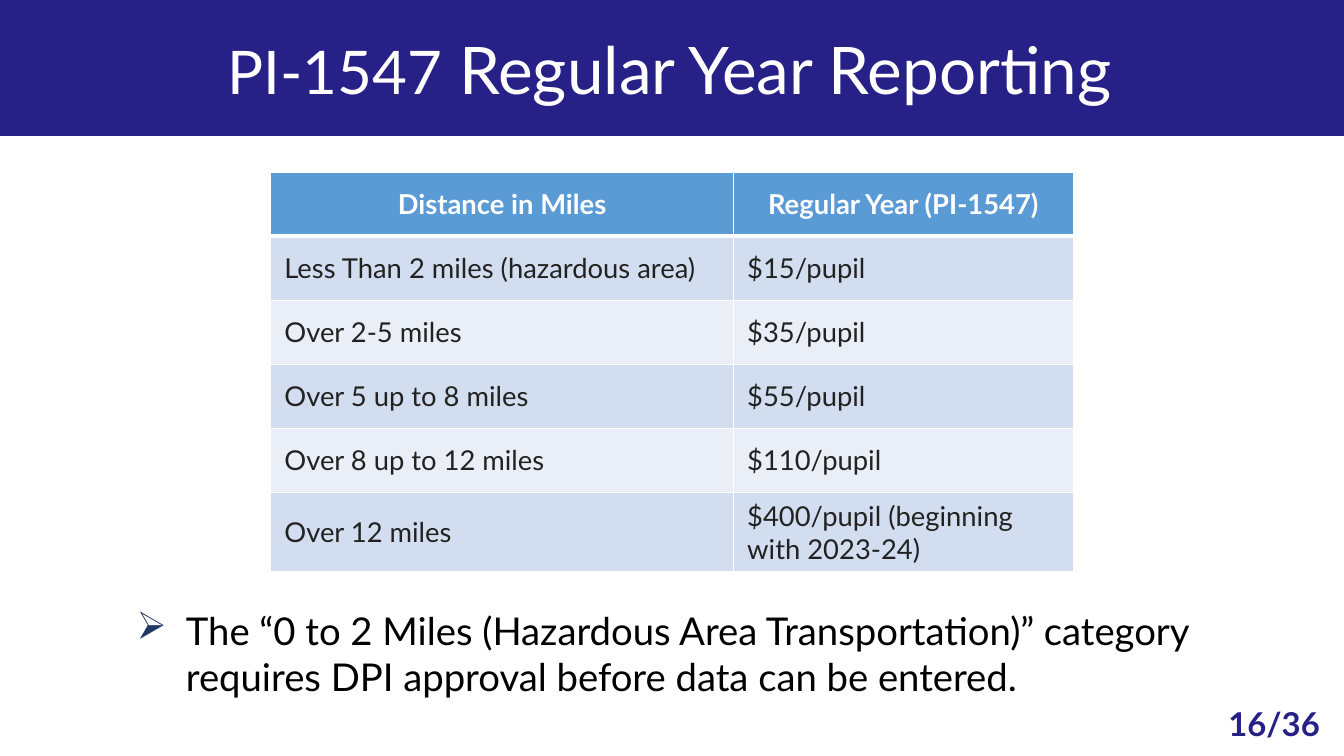
"""Build the PI-1547 regular year reporting slide."""
from lxml import etree
from pptx import Presentation
from pptx.dml.color import RGBColor
from pptx.enum.shapes import MSO_SHAPE
from pptx.enum.text import MSO_ANCHOR, PP_ALIGN
from pptx.oxml.ns import qn
from pptx.util import Pt

TITLE = [("PI-1547", 44), (" Regular Year Reporting", 48)]
RATES = [
    ("Distance in Miles", "Regular Year (PI-1547)"),
    ("Less Than 2 miles (hazardous area)", "$15/pupil"),
    ("Over 2-5 miles", "$35/pupil"),
    ("Over 5 up to 8 miles", "$55/pupil"),
    ("Over 8 up to 12 miles", "$110/pupil"),
    ("Over 12 miles", "$400/pupil (beginning with 2023-24)"),
]
NOTE = ("The “0 to 2 Miles (Hazardous Area Transportation)” category "
        "requires DPI approval before data can be entered.")
PAGE_NUMBER = "16/36"

FONT = "Lato"
NAVY = RGBColor(0x26, 0x20, 0x87)
WHITE = RGBColor(0xFF, 0xFF, 0xFF)
BLACK = RGBColor(0, 0, 0)
DARK_GREY = RGBColor(0x22, 0x22, 0x22)
HEADER_BLUE = RGBColor(0x5B, 0x9B, 0xD5)
BAND_BLUE = RGBColor(0xD2, 0xDE, 0xEF)
BAND_PALE = RGBColor(0xEA, 0xEF, 0xF7)
BULLET_NAVY = RGBColor(0x20, 0x38, 0x64)
CENTER, LEFT = PP_ALIGN.CENTER, PP_ALIGN.LEFT
MIDDLE = MSO_ANCHOR.MIDDLE
RECTANGLE = MSO_SHAPE.RECTANGLE

SLIDE_WIDTH, SLIDE_HEIGHT = 982.8, 552.96
BAND_HEIGHT = 99.36
TABLE_LEFT, TABLE_TOP = 198, 126
COLUMN_WIDTHS = [338.4, 248.4]
ROW_HEIGHTS = [46.8] * 5 + [57.6]


def style(font, size, color, bold=False):
    font.name = FONT
    font.size = Pt(size)
    font.bold = bold
    font.color.rgb = color


def add_box(page, left, top, width, height):
    box = page.shapes.add_textbox(Pt(left), Pt(top), Pt(width), Pt(height))
    box.text_frame.word_wrap = True
    return box.text_frame


def add_bullet(para, character, color, indent):
    properties = para._p.get_or_add_pPr()
    properties.set("marL", str(Pt(indent)))
    properties.set("indent", str(Pt(-indent)))
    bullet_color = etree.SubElement(properties, qn("a:buClr"))
    etree.SubElement(bullet_color, qn("a:srgbClr"), val=str(color))
    etree.SubElement(properties, qn("a:buChar"), char=character)


def add_borders(cell, bottom_width):
    properties = cell._tc.get_or_add_tcPr()
    for side, width in (("L", 1), ("R", 1), ("T", 1), ("B", bottom_width)):
        line = etree.SubElement(properties, qn("a:ln" + side), w=str(Pt(width)))
        fill = etree.SubElement(line, qn("a:solidFill"))
        etree.SubElement(fill, qn("a:srgbClr"), val=str(WHITE))


def add_title(page):
    band = page.shapes.add_shape(RECTANGLE, 0, 0, Pt(SLIDE_WIDTH), Pt(BAND_HEIGHT))
    band.shadow.inherit = False
    band.fill.solid()
    band.fill.fore_color.rgb = NAVY
    band.line.fill.background()
    frame = add_box(page, 57.6, 0, 864, BAND_HEIGHT)
    frame.vertical_anchor = MIDDLE
    para = frame.paragraphs[0]
    para.alignment = CENTER
    for text, size in TITLE:
        span = para.add_run()
        span.text = text
        style(span.font, size, WHITE)


def add_rates(page):
    table = page.shapes.add_table(
        len(RATES), len(COLUMN_WIDTHS), Pt(TABLE_LEFT), Pt(TABLE_TOP),
        Pt(sum(COLUMN_WIDTHS)), Pt(sum(ROW_HEIGHTS))).table
    for column, width in zip(table.columns, COLUMN_WIDTHS):
        column.width = Pt(width)
    for row, height in zip(table.rows, ROW_HEIGHTS):
        row.height = Pt(height)
    for row_index, texts in enumerate(RATES):
        header = row_index == 0
        band_color = BAND_BLUE if row_index % 2 else BAND_PALE
        for column_index, text in enumerate(texts):
            cell = table.cell(row_index, column_index)
            add_borders(cell, 3 if header else 1)
            cell.fill.solid()
            cell.fill.fore_color.rgb = HEADER_BLUE if header else band_color
            cell.vertical_anchor = MIDDLE
            cell.margin_left = cell.margin_right = Pt(10)
            cell.margin_top = cell.margin_bottom = Pt(5)
            cell.text_frame.text = text
            para = cell.text_frame.paragraphs[0]
            para.alignment = CENTER if header else LEFT
            style(para.runs[0].font, 20, WHITE if header else DARK_GREY, header)


def add_note(page):
    frame = add_box(page, 92.88, 440.64, 874.8, 79.92)
    frame.text = NOTE
    para = frame.paragraphs[0]
    add_bullet(para, "➢", BULLET_NAVY, 36)
    style(para.runs[0].font, 28, BLACK)


def add_page_number(page):
    frame = add_box(page, 887.76, 511.2, 87.84, 36)
    frame.text = PAGE_NUMBER
    para = frame.paragraphs[0]
    para.alignment = CENTER
    style(para.runs[0].font, 24, NAVY, True)


def main():
    deck = Presentation()
    deck.slide_width, deck.slide_height = Pt(SLIDE_WIDTH), Pt(SLIDE_HEIGHT)
    page = deck.slides.add_slide(deck.slide_layouts[6])
    add_title(page)
    add_rates(page)
    add_note(page)
    add_page_number(page)
    deck.save("out.pptx")


if __name__ == "__main__":
    main()
